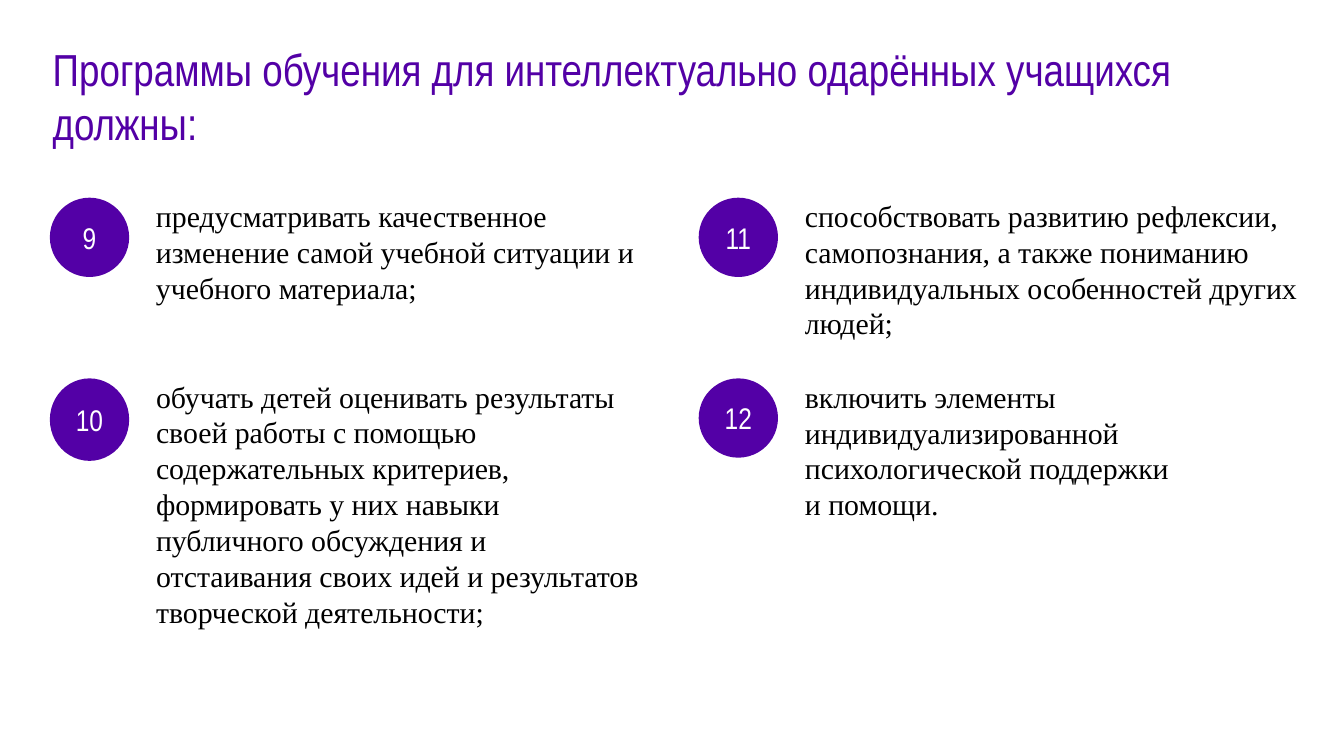
"""Build the slide on study programmes for gifted pupils."""
from pptx import Presentation
from pptx import util as u
from pptx.dml import color
from pptx.enum import shapes, text

HUES = {"main": "5300A6", "ink": "000000", "pale": "FFFFFF"}


def write(shape, words, font, size, hue, align="LEFT", anchor="TOP", inset=0, pitch=None):
    """Fill a shape with formatted text, one paragraph a line."""
    frame = shape.text_frame
    frame.text = words
    frame.word_wrap = True
    frame.auto_size = text.MSO_AUTO_SIZE.NONE
    frame.vertical_anchor = text.MSO_ANCHOR[anchor]
    frame.margin_left = u.Pt(inset)
    frame.margin_top = frame.margin_right = frame.margin_bottom = 0
    for para in frame.paragraphs:
        para.alignment = text.PP_ALIGN[align]
        if pitch:
            para.line_spacing = u.Pt(pitch)
        para.font.name = font
        para.font.size = u.Pt(size)
        para.font.color.rgb = color.RGBColor.from_string(HUES[hue])


class Page:
    """Hold the style and the current slide."""

    head = "Arial Narrow"
    body = "Times New Roman"
    size = 16

    def __init__(self, deck):
        """Add a title-only slide."""
        self.slide = deck.slides.add_slide(deck.slide_layouts[5])

    def title(self, words, *box):
        """Place the slide title."""
        shape = self.slide.shapes.title
        shape.left, shape.top, shape.width, shape.height = map(u.Pt, box)
        write(shape, words, self.head, 24, "main")

    def badge(self, label, *box):
        """Draw a numbered disc."""
        disc = self.slide.shapes.add_shape(shapes.MSO_SHAPE.OVAL, *map(u.Pt, box))
        disc.shadow.inherit = False
        disc.fill.solid()
        disc.fill.fore_color.rgb = color.RGBColor.from_string(HUES["main"])
        disc.line.fill.background()
        write(disc, label, self.head, self.size, "pale", align="CENTER", anchor="MIDDLE")

    def note(self, words, *box):
        """Place the text beside a disc."""
        shape = self.slide.shapes.add_textbox(*map(u.Pt, box))
        write(shape, words, self.body, self.size, "ink", inset=14.4, pitch=19.2)


def main():
    """Build and save the deck."""
    deck = Presentation()
    deck.slide_width, deck.slide_height = u.Pt(720), u.Pt(405)
    page = Page(deck)
    page.title("Программы обучения для интеллектуально одарённых учащихся должны:",
               28.2, 22.3, 622, 58.3)
    items = [
        ("предусматривать качественное изменение самой учебной ситуации и учебного материала;",
         274, 58.3, 42.5),
        ("обучать детей оценивать результаты своей работы с помощью содержательных критериев, "
         "формировать у них навыки публичного обсуждения и отстаивания своих идей "
         "и результатов творческой деятельности;", 276, 155, 44.2),
        ("способствовать развитию рефлексии, самопознания, а также пониманию "
         "индивидуальных особенностей других людей;", 291, 77.8, 42.5),
        ("включить элементы индивидуализированной психологической поддержки\nи помощи.",
         275, 77.8, 42.5),
    ]
    disc = 42.5
    for spot, (words, wide, high, tall) in enumerate(items):
        col, row = divmod(spot, 2)
        left, top = 26.7 + col * 347.6, 105.9 + row * 96.8
        page.badge(str(spot + 9), left, top, disc, tall)
        page.note(words, left + disc, top, wide, high)
    deck.save("out.pptx")


if __name__ == "__main__":
    main()
